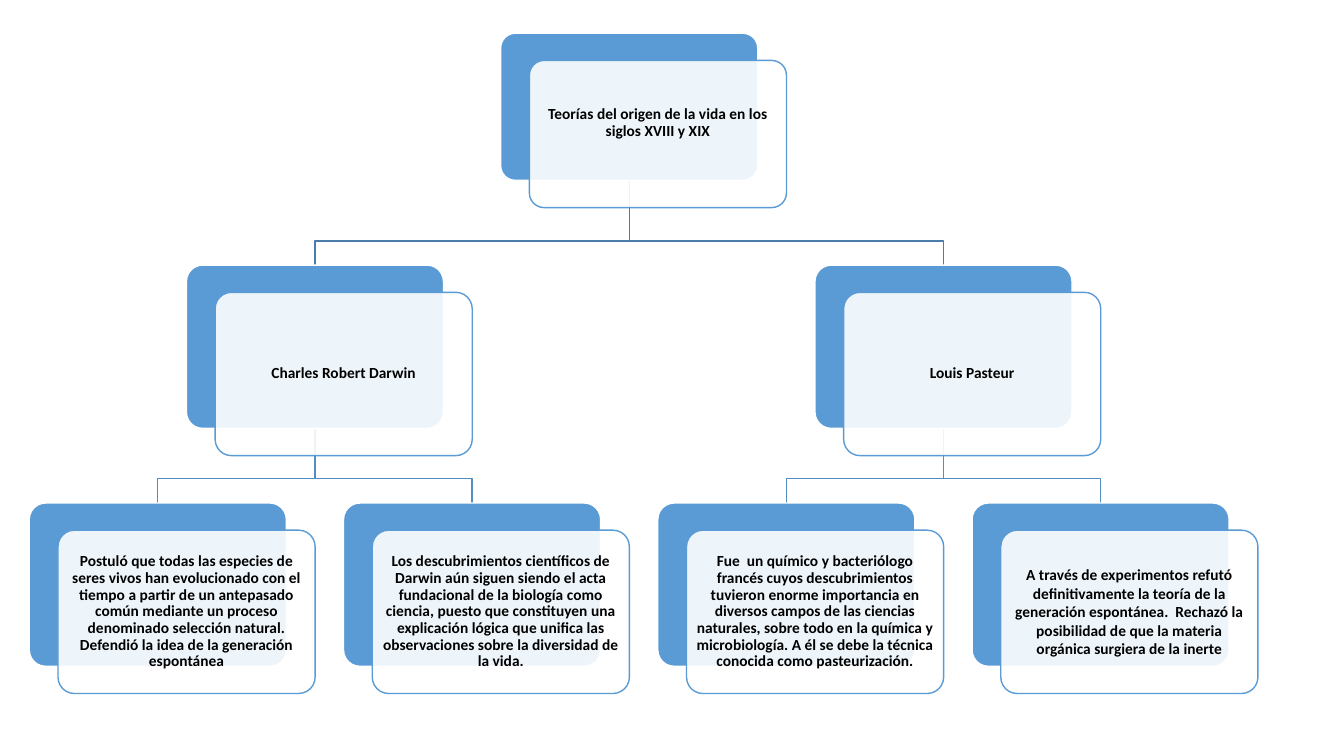
import dataclasses

import lxml.etree
import pptx
import pptx.dml.color
import pptx.enum.shapes
import pptx.enum.text
import pptx.oxml.ns
import pptx.util

LEFT, PITCH = 0.29, 3.117
WIDTH = 2.55
SHIFT_X, SHIFT_Y = 0.285, 0.27
DROP = 0.24
INSET = 0.05
BLUE, WHITE, BLACK = "5B9BD5", "FFFFFF", "000000"


@dataclasses.dataclass(frozen=True)
class Row:
    top: float
    height: float
    line: str


@dataclasses.dataclass(frozen=True)
class Node:
    text: str
    col: float
    row: int
    boss: int | None = None
    space: float = 0.9
    foot: float = INSET

    @property
    def left(self) -> float:
        return LEFT + self.col * PITCH

    @property
    def mid(self) -> float:
        return self.left + WIDTH / 2


ROWS = (Row(0.33, 1.46, "497CAB"), Row(2.63, 1.62, "538DC1"), Row(4.99, 1.62, "538DC1"))

NODES = (
    Node("Teorías del origen de la vida en los siglos XVIII y XIX", 1.5, 0, foot=0.27),
    Node("Charles Robert Darwin", 0.5, 1, 0),
    Node("Louis Pasteur", 2.5, 1, 0),
    Node("Postuló que todas las especies de seres vivos han evolucionado con el tiempo "
         "a partir de un antepasado común mediante un proceso denominado selección "
         "natural. Defendió la idea de la generación espontánea", 0, 2, 1),
    Node("Los descubrimientos científicos de Darwin aún siguen siendo el acta "
         "fundacional de la biología como ciencia, puesto que constituyen una "
         "explicación lógica que unifica las observaciones sobre la diversidad "
         "de la vida.", 1, 2, 1),
    Node("Fue  un químico y bacteriólogo francés cuyos descubrimientos tuvieron "
         "enorme importancia en diversos campos de las ciencias naturales, sobre todo "
         "en la química y microbiología. A él se debe la técnica conocida como "
         "pasteurización.", 2, 2, 2),
    Node("A través de experimentos refutó definitivamente la teoría de la generación "
         "espontánea.  Rechazó la posibilidad de que la materia orgánica surgiera "
         "de la inerte", 3, 2, 2, space=1.0),
)


def tint(form, code: str) -> None:
    form.rgb = pptx.dml.color.RGBColor.from_string(code)


def edge(shape, code: str) -> None:
    shape.shadow.inherit = False
    tint(shape.line.color, code)
    shape.line.width = pptx.util.Pt(1)


def card(slide, left: float, top: float, high: float, *, fill: str, line: str,
         clear: int | None = None):
    shape = slide.shapes.add_shape(
        pptx.enum.shapes.MSO_SHAPE.ROUNDED_RECTANGLE,
        *map(pptx.util.Inches, (left, top, WIDTH, high)))
    shape.adjustments[0] = 0.1
    shape.fill.solid()
    tint(shape.fill.fore_color, fill)
    edge(shape, line)
    if clear is not None:
        tone = shape.fill._xPr.find(".//" + pptx.oxml.ns.qn("a:srgbClr"))
        lxml.etree.SubElement(tone, pptx.oxml.ns.qn("a:alpha"), val=str(clear * 1000))
    return shape


def write(shape, text: str, *, size: float = 11, font: str = "Calibri",
          color: str = BLACK, bold: bool = True, space: float = 0.9,
          foot: float = INSET) -> None:
    frame = shape.text_frame
    frame.word_wrap = True
    frame.vertical_anchor = pptx.enum.text.MSO_ANCHOR.MIDDLE
    frame.margin_left = frame.margin_right = frame.margin_top = pptx.util.Inches(INSET)
    frame.margin_bottom = pptx.util.Inches(foot)
    para = frame.paragraphs[0]
    para.alignment = pptx.enum.text.PP_ALIGN.CENTER
    para.line_spacing = space
    run = para.add_run()
    run.text = text
    run.font.name, run.font.size, run.font.bold = font, pptx.util.Pt(size), bold
    tint(run.font.color, color)


def link(slide, boss: Node, node: Node) -> None:
    row = ROWS[boss.row]
    start, end = row.top + row.height, ROWS[node.row].top
    bend = end - DROP
    points = ((boss.mid, start), (boss.mid, bend), (node.mid, bend), (node.mid, end))
    first, *rest = [tuple(map(pptx.util.Inches, point)) for point in points]
    pen = slide.shapes.build_freeform(*first)
    pen.add_line_segments(rest, close=False)
    shape = pen.convert_to_shape()
    shape.fill.background()
    edge(shape, row.line)


def draw(slide, node: Node) -> None:
    row = ROWS[node.row]
    card(slide, node.left, row.top, row.height, fill=BLUE, line=WHITE)
    front = card(slide, node.left + SHIFT_X, row.top + SHIFT_Y, row.height,
                 fill=WHITE, line=BLUE, clear=90)
    write(front, node.text, space=node.space, foot=node.foot)


def main() -> None:
    deck = pptx.Presentation()
    deck.slide_width = pptx.util.Inches(13.33)
    deck.slide_height = pptx.util.Inches(7.5)
    slide = deck.slides.add_slide(deck.slide_layouts[6])
    for node in NODES:
        if node.boss is not None:
            link(slide, NODES[node.boss], node)
    for node in NODES:
        draw(slide, node)
    deck.save("out.pptx")


if __name__ == "__main__":
    main()
